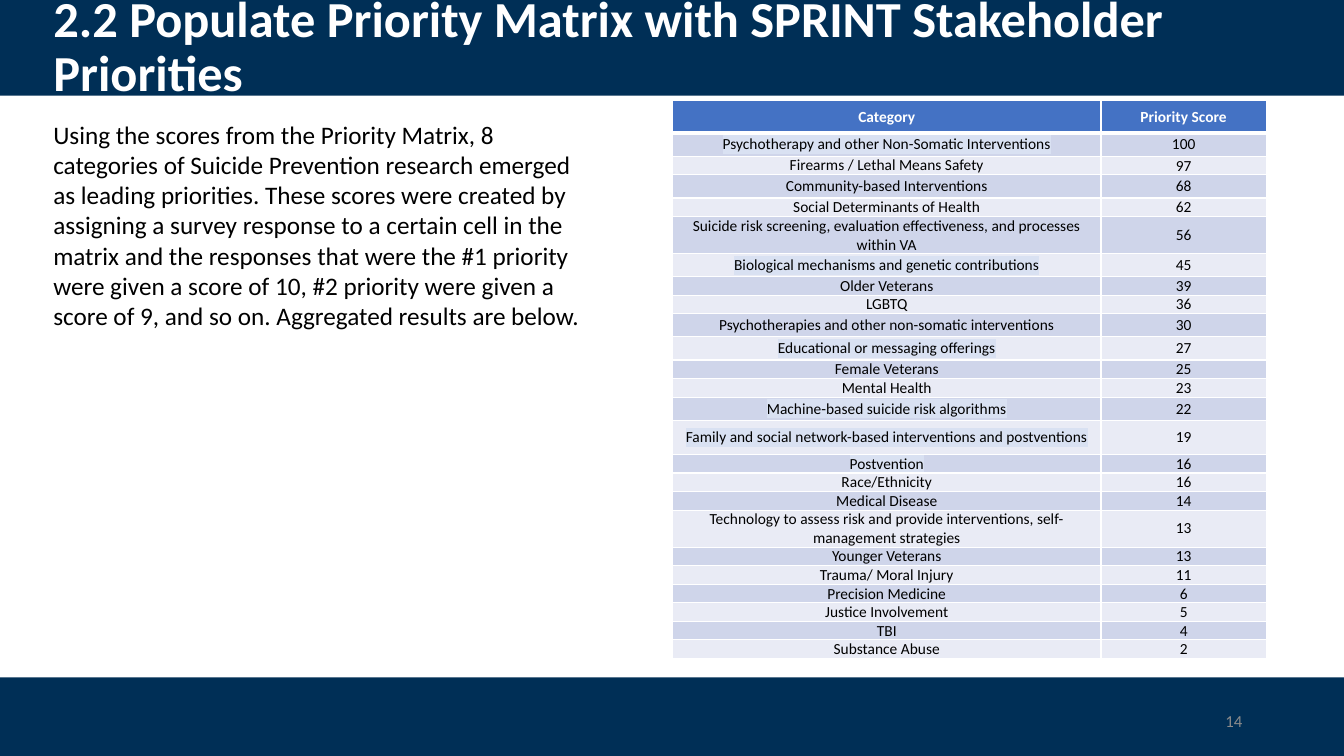
from lxml.etree import SubElement as Sub
from pptx import Presentation
from pptx.dml.color import RGBColor as RGB
from pptx.enum.shapes import MSO_SHAPE as Shape
from pptx.enum.text import MSO_ANCHOR as Anchor, MSO_AUTO_SIZE as Fit, PP_ALIGN as Align
from pptx.oxml.ns import qn
from pptx.util import Inches, Pt

COLORS = {
    "navy": "002F56", "white": "FFFFFF", "black": "000000", "gray": "8C8C8C",
    "head": "4472C4", "odd": "CFD5EA", "even": "E9EBF5", "mark": "D9E1F2",
}
TITLE = "2.2 Populate Priority Matrix with SPRINT Stakeholder Priorities"
INTRO = (
    "Using the scores from the Priority Matrix, 8 categories of Suicide Prevention "
    "research emerged as leading priorities. These scores were created by assigning a "
    "survey response to a certain cell in the matrix and the responses that were the #1 "
    "priority were given a score of 10, #2 priority were given a score of 9, and so on. "
    "Aggregated results are below."
)

# Row heights in inches
LOW, MID, TALL = 0.16, 0.23, 0.34

# Category, score, row height
SCORES = [
    ("Psychotherapy and other Non-Somatic Interventions", 100, MID),
    ("Firearms / Lethal Means Safety", 97, LOW),
    ("Community-based Interventions", 68, MID),
    ("Social Determinants of Health", 62, LOW),
    ("Suicide risk screening, evaluation effectiveness, and processes within VA", 56, TALL),
    ("Biological mechanisms and genetic contributions", 45, MID),
    ("Older Veterans", 39, LOW),
    ("LGBTQ", 36, LOW),
    ("Psychotherapies and other non-somatic interventions", 30, MID),
    ("Educational or messaging offerings", 27, MID),
    ("Female Veterans", 25, LOW),
    ("Mental Health", 23, LOW),
    ("Machine-based suicide risk algorithms", 22, MID),
    ("Family and social network-based interventions and postventions", 19, TALL),
    ("Postvention", 16, LOW),
    ("Race/Ethnicity", 16, LOW),
    ("Medical Disease", 14, LOW),
    ("Technology to assess risk and provide interventions, self-management strategies",
     13, TALL),
    ("Younger Veterans", 13, LOW),
    ("Trauma/ Moral Injury", 11, LOW),
    ("Precision Medicine", 6, LOW),
    ("Justice Involvement", 5, LOW),
    ("TBI", 4, LOW),
    ("Substance Abuse", 2, LOW),
]
# Rows whose category is highlighted
MARKED = {1, 6, 10, 13, 14, 15}


def color(name):
    return RGB.from_string(COLORS[name])


def style(para, size, tint, bold=False, align=Align.LEFT):
    para.alignment = align
    font = para.runs[0].font
    font.name, font.size, font.bold = "Calibri", Pt(size), bold
    font.color.rgb = color(tint)


def place(shape, left, top, width, height):
    shape.left, shape.top = Inches(left), Inches(top)
    shape.width, shape.height = Inches(width), Inches(height)


def add_band(slide, top, height):
    band = slide.shapes.add_shape(
        Shape.RECTANGLE, 0, Inches(top), Inches(13.33), Inches(height))
    band.shadow.inherit = False
    band.fill.solid()
    band.fill.fore_color.rgb = color("navy")
    band.line.fill.background()
    # Keep the band behind the title
    slide.shapes.title.element.addprevious(band.element)


def set_title(slide):
    title = slide.shapes.title
    place(title, 0.43, 0.11, 12.62, 0.74)
    frame = title.text_frame
    frame.text = TITLE
    frame.word_wrap = True
    frame.auto_size = Fit.NONE
    frame.vertical_anchor = Anchor.MIDDLE
    para = frame.paragraphs[0]
    para.line_spacing = 0.9
    style(para, 36, "white", True)


def add_text(slide, text, area, size, tint, align=Align.LEFT, anchor=Anchor.TOP):
    box = slide.shapes.add_textbox(*map(Inches, area))
    frame = box.text_frame
    frame.text = text
    frame.word_wrap = True
    frame.vertical_anchor = anchor
    style(frame.paragraphs[0], size, tint, align=align)


def add_edge(cell, side, width):
    edge = Sub(cell._tc.get_or_add_tcPr(), qn(f"a:ln{side}"), w=str(Pt(width)))
    fill = Sub(edge, qn("a:solidFill"))
    Sub(fill, qn("a:srgbClr"), val=COLORS["white"])


def mark(run):
    latin = run.font._element.find(qn("a:latin"))
    light = Sub(run.font._element, qn("a:highlight"))
    Sub(light, qn("a:srgbClr"), val=COLORS["mark"])
    latin.addprevious(light)


def fill_cell(cell, text, row, anchor):
    cell.text = text
    cell.vertical_anchor = anchor
    cell.margin_left = cell.margin_right = cell.margin_top = cell.margin_bottom = 0
    for side in "LRTB":
        # The line under the header is thicker
        thick = (row, side) in {(0, "B"), (1, "T")}
        add_edge(cell, side, 3 if thick else 1)
    cell.fill.solid()
    cell.fill.fore_color.rgb = color(
        "head" if row == 0 else "odd" if row % 2 else "even")
    style(cell.text_frame.paragraphs[0], 11, "black" if row else "white",
          row == 0, Align.CENTER)


def add_scores(slide):
    rows = [("Category", "Priority Score", 0.32)] + SCORES
    table = slide.shapes.add_table(
        len(rows), 2, Inches(6.67), Inches(1), Inches(5.89), Inches(5.6)).table
    table.columns[0].width, table.columns[1].width = Inches(4.25), Inches(1.64)
    for row, (name, score, height) in enumerate(rows):
        table.rows[row].height = Inches(height)
        anchor = Anchor.BOTTOM if height == LOW else Anchor.MIDDLE
        label = table.cell(row, 0)
        fill_cell(label, name, row, anchor)
        fill_cell(table.cell(row, 1), str(score), row, Anchor.MIDDLE)
        if row in MARKED:
            mark(label.text_frame.paragraphs[0].runs[0])


def main():
    deck = Presentation()
    deck.slide_width, deck.slide_height = Inches(13.33), Inches(7.5)
    slide = deck.slides.add_slide(deck.slide_layouts[5])

    # Bands and title
    add_band(slide, 0, 0.95)
    add_band(slide, 6.72, 0.8)
    set_title(slide)

    # Page number and intro
    add_text(slide, "14", (9.42, 6.95, 3, 0.4), 12, "gray", Align.RIGHT, Anchor.MIDDLE)
    add_text(slide, INTRO, (0.43, 1.13, 5.49, 2.22), 18, "black")

    # Score table
    add_scores(slide)
    deck.save("out.pptx")


if __name__ == "__main__":
    main()
